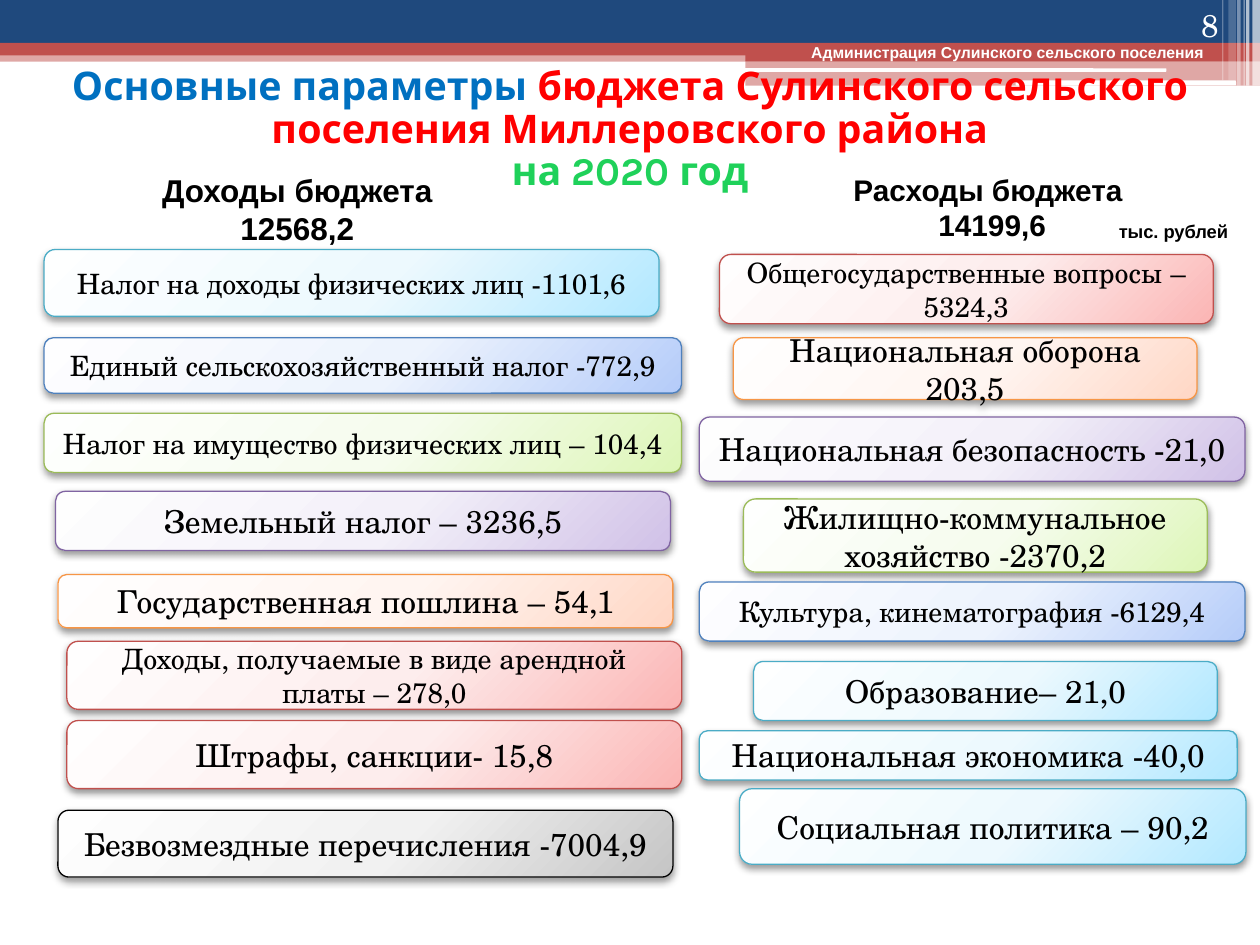
from pptx import Presentation
from pptx.dml.color import RGBColor
from pptx.enum.shapes import MSO_SHAPE
from pptx.enum.text import MSO_ANCHOR, PP_ALIGN
from pptx.oxml import parse_xml
from pptx.oxml.ns import nsdecls, qn
from pptx.util import Pt

NAVY = RGBColor(0x1F, 0x49, 0x7D)
BRICK = RGBColor(0xC0, 0x50, 0x4D)
WHITE = RGBColor(0xFF, 0xFF, 0xFF)
BLACK = RGBColor(0x00, 0x00, 0x00)
AZURE = RGBColor(0x00, 0x70, 0xC0)
RED = RGBColor(0xFF, 0x00, 0x00)
LIME = RGBColor(0x1F, 0xD1, 0x5A)

AQUA = (RGBColor(0x4B, 0xAC, 0xC6), "FEFFFF", "EDF9FE", "B2E8FF")
GREEN = (RGBColor(0x9B, 0xBB, 0x59), "FEFFFE", "F6FCEE", "DDF6B8")
PLUM = (RGBColor(0x80, 0x64, 0xA2), "FEFEFE", "F3F0F9", "D0C1E7")
BLUE = (RGBColor(0x4F, 0x81, 0xBD), "FEFEFF", "EDF3FD", "B5CCF9")
PEACH = (RGBColor(0xF7, 0x96, 0x46), "FFFEFE", "FFF5F1", "FFD7C5")
ROSE = (BRICK, "FFFEFE", "FDEDED", "FBB5B4")
GREY = (BLACK, "FEFEFE", "F1F1F1", "C5C5C5")
SERIF = "TeX Gyre Schola"

deck = Presentation()
deck.slide_width, deck.slide_height = Pt(720), Pt(540)
slide = deck.slides.add_slide(deck.slide_layouts[6])


def add_form(kind, left, top, width, height):
    form = slide.shapes.add_shape(kind, Pt(left), Pt(top), Pt(width), Pt(height))
    form.shadow.inherit = False
    return form


def add_text(area, text, size, face, color, bold=False, align=PP_ALIGN.CENTER, anchor=MSO_ANCHOR.TOP):
    left, top, width, height = area
    box = slide.shapes.add_textbox(Pt(left), Pt(top), Pt(width), Pt(height))
    frame = box.text_frame
    frame.word_wrap = True
    frame.vertical_anchor = anchor
    frame.text = text
    for para in frame.paragraphs:
        para.alignment = align
        for run in para.runs:
            run.font.size = Pt(size)
            run.font.name = face
            run.font.bold = bold
            run.font.color.rgb = color
    return box


RECT, ROUND = MSO_SHAPE.RECTANGLE, MSO_SHAPE.ROUNDED_RECTANGLE
bands = [
    (RECT, 0, 28.8, 720, 6.5, BRICK, 50),
    (RECT, 0, 0, 720, 24.5, NAVY, 100),
    (RECT, 0, 24.5, 720, 7.2, BRICK, 100),
    (RECT, 426, 28, 294, 7, BRICK, 100),
    (RECT, 426, 34.6, 294, 14.4, BRICK, 50),
    (ROUND, 425.5, 39, 241, 2, WHITE, 100),
    (ROUND, 580.3, 46, 126, 2.9, WHITE, 100),
    (RECT, 715.7, 0, 4.3, 49, WHITE, 65),
    (RECT, 712, 0, 2, 49, WHITE, 65),
    (RECT, 710.6, 0, 0.7, 49, WHITE, 60),
    (RECT, 707, 0, 2, 49, WHITE, 40),
    (RECT, 702, 0, 4.3, 46, WHITE, 20),
    (RECT, 698.4, 0, 0.7, 46, WHITE, 30),
]
for kind, left, top, width, height, color, alpha in bands:
    band = add_form(kind, left, top, width, height)
    band.fill.solid()
    band.fill.fore_color.rgb = color
    band.line.fill.background()
    if alpha < 100:
        tint = band.fill._xPr.find(qn("a:solidFill"))[0]
        tint.append(parse_xml(f'<a:alpha {nsdecls("a")} val="{alpha * 1000}"/>'))

title = add_text((0, 54.7, 720, 39.6), "", 22.5, "Karla", AZURE, anchor=MSO_ANCHOR.MIDDLE)
para = title.text_frame.paragraphs[0]
para.line_spacing = 0.9
parts = [
    ("Основные параметры ", AZURE),
    ("бюджета Сулинского сельского поселения Миллеровского района", RED),
    ("на 2020 год", LIME),
]
for text, color in parts:
    if color == LIME:
        para.add_line_break()
    run = para.add_run()
    run.text = text
    run.font.size = Pt(22.5)
    run.font.name = "Karla"
    run.font.bold = True
    run.font.color.rgb = color

add_text((456.5, 20.9, 244, 18), "Администрация Сулинского сельского поселения",
         9, "Arial", WHITE, True, PP_ALIGN.LEFT)
add_text((76.3, 94.3, 187.2, 51), "Доходы бюджета\n12568,2", 18, "Arial", BLACK, True)
add_text((462.2, 94.3, 209.5, 48), "Расходы бюджета\u0020\n14199,6", 17, "Arial", BLACK, True)
add_text((632.2, 122.4, 121.7, 20), "тыс. рублей", 10.5, "Arial", BLACK, True, PP_ALIGN.LEFT)
add_text((643.7, 0, 59.8, 28.8), "8", 18, SERIF, WHITE, False, PP_ALIGN.RIGHT, MSO_ANCHOR.BOTTOM)

cards = [
    (25.2, 142.6, 351.4, 38.2, AQUA, 16, "Налог на доходы физических лиц -1101,6"),
    (25.2, 193, 364.3, 31.7, BLUE, 16, "Единый сельскохозяйственный налог -772,9"),
    (25.2, 236.2, 364.3, 33.8, GREEN, 16, "Налог на имущество физических лиц – 104,4"),
    (31.7, 280.8, 351.4, 33.8, PLUM, 18, "Земельный налог – 3236,5"),
    (33.1, 328.3, 351.4, 30.5, PEACH, 18, "Государственная пошлина – 54,1"),
    (38.2, 366.5, 351.4, 38.9, ROSE, 16, "Доходы, получаемые в виде арендной платы – 278,0"),
    (38.2, 411.8, 351.4, 38.9, ROSE, 18, "Штрафы, санкции- 15,8"),
    (33.1, 463, 351.4, 38.2, GREY, 18, "Безвозмездные перечисления -7004,9"),
    (411.1, 145.4, 282.2, 39.6, ROSE, 16, "Общегосударственные вопросы – 5324,3"),
    (419, 193, 265, 35.3, PEACH, 18, "Национальная оборона 203,5"),
    (399.6, 238.3, 311.8, 36.7, PLUM, 18, "Национальная безопасность -21,0"),
    (424.8, 285.1, 265, 41.8, GREEN, 18, "Жилищно-коммунальное хозяйство -2370,2"),
    (399.6, 332.6, 311.8, 33.8, BLUE, 16, "Культура, кинематография -6129,4"),
    (430.6, 378, 265, 33.8, AQUA, 18, "Образование– 21,0"),
    (399.6, 417.6, 307.4, 28.1, AQUA, 18, "Национальная экономика -40,0"),
    (422.6, 450.7, 289.4, 43.2, AQUA, 18, "Социальная политика – 90,2"),
]
for left, top, width, height, theme, size, text in cards:
    edge, *tones = theme
    card = add_form(MSO_SHAPE.FLOWCHART_ALTERNATE_PROCESS, left, top, width, height)
    card.line.color.rgb = edge
    card.line.width = Pt(0.75)
    card.fill.gradient()
    stops = "".join(
        f'<a:gs pos="{pos * 1000}"><a:srgbClr val="{tone}"/></a:gs>'
        for pos, tone in zip((0, 55, 100), tones)
    )
    props = card.fill._xPr
    props.replace(props.find(qn("a:gradFill")), parse_xml(
        f'<a:gradFill {nsdecls("a")} rotWithShape="1"><a:gsLst>{stops}</a:gsLst>'
        '<a:path path="circle"><a:fillToRect l="-40000" t="-90000" r="140000" b="190000"/>'
        '</a:path></a:gradFill>'))
    props.find(qn("a:effectLst")).append(parse_xml(
        f'<a:outerShdw {nsdecls("a")} blurRad="{Pt(4.1)}" dist="{Pt(2)}" dir="5400000" rotWithShape="0">'
        '<a:srgbClr val="000000"><a:alpha val="40000"/></a:srgbClr></a:outerShdw>'))
    frame = card.text_frame
    frame.text = text
    frame.word_wrap = True
    frame.vertical_anchor = MSO_ANCHOR.MIDDLE
    para = frame.paragraphs[0]
    para.alignment = PP_ALIGN.CENTER
    font = para.runs[0].font
    font.size = Pt(size)
    font.name = SERIF
    font.color.rgb = BLACK

deck.save("out.pptx")
